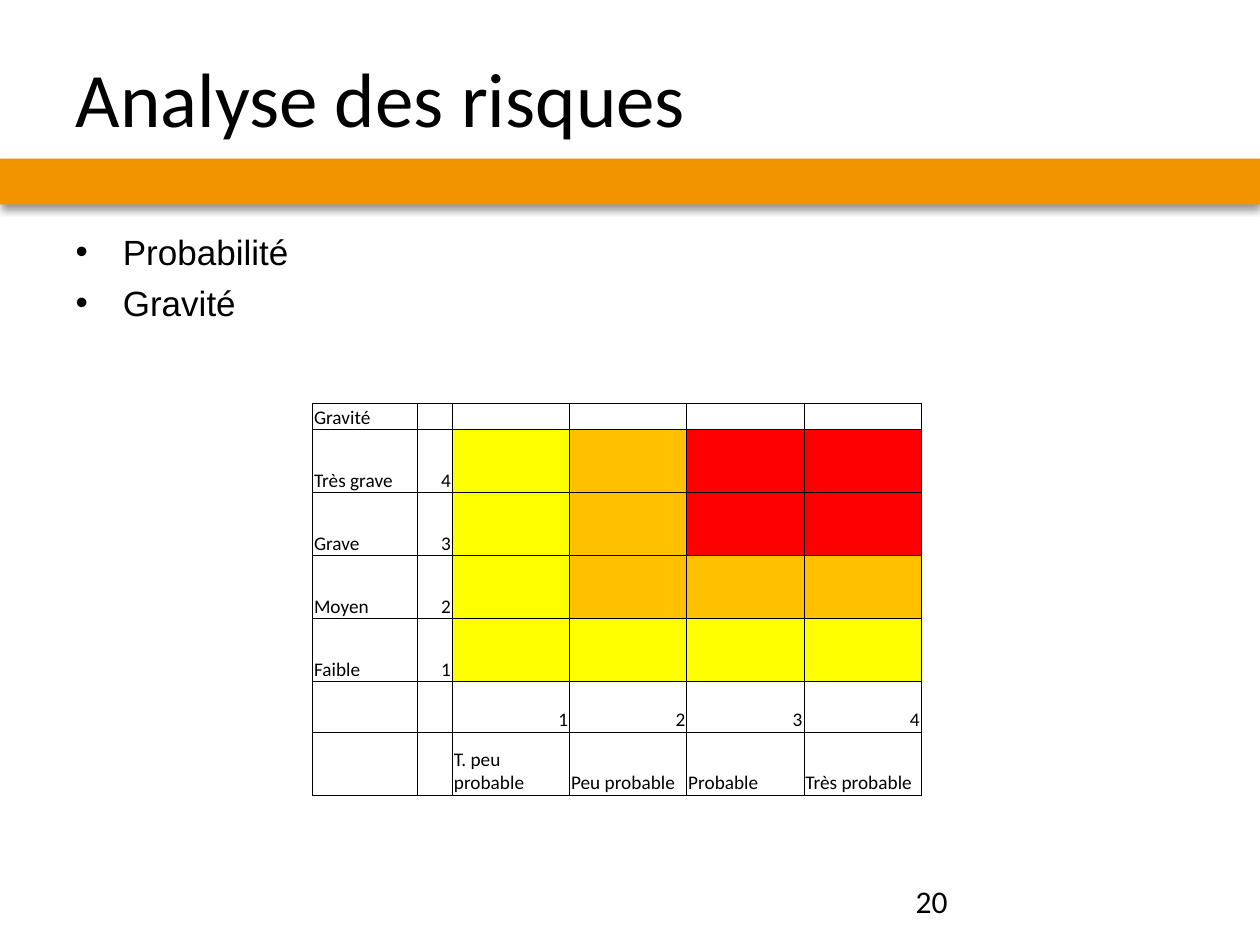
import pptx
import pptx.dml.color
import pptx.enum.shapes
import pptx.enum.text
import pptx.oxml
import pptx.oxml.ns
import pptx.util
from dataclasses import dataclass

Cm = pptx.util.Cm
Pt = pptx.util.Pt
Align = pptx.enum.text.PP_ALIGN
Anchor = pptx.enum.text.MSO_ANCHOR
DRAWING = pptx.oxml.ns.nsdecls("a")


@dataclass(frozen=True)
class Theme:
    ink: str = "000000"
    band: str = "F29400"
    low: str = "FFFF00"
    medium: str = "FFC000"
    high: str = "FF0000"
    heading_font: str = "Calibri"
    body_font: str = "Arial"
    title_size: int = 44
    body_size: int = 20
    number_size: int = 18
    cell_size: int = 11
    border_width: float = 0.5


THEME = Theme()

SEVERITIES = [
    ("Très grave", "4", "LMHH"),
    ("Grave", "3", "LMHH"),
    ("Moyen", "2", "LMMM"),
    ("Faible", "1", "LLLL"),
]
PROBABILITIES = ["T. peu probable", "Peu probable", "Probable", "Très probable"]
RISK_COLOURS = {"L": THEME.low, "M": THEME.medium, "H": THEME.high}


def set_formats(target, formats):
    for name, value in formats.items():
        setattr(target, name, value)


def place(shape, box):
    """Box is left, top, width and height in centimetres."""
    lengths = map(Cm, box)
    set_formats(shape, dict(zip(("left", "top", "width", "height"), lengths)))


def write(para, text, font, size):
    span = para.add_run()
    span.text = text
    set_formats(span.font, {"name": font, "size": Pt(size), "bold": False})
    span.font.color.rgb = pptx.dml.color.RGBColor.from_string(THEME.ink)


def fill(target, colour):
    target.fill.solid()
    target.fill.fore_color.rgb = pptx.dml.color.RGBColor.from_string(colour)


def add_band(page, box):
    band = page.shapes.add_shape(
        pptx.enum.shapes.MSO_SHAPE.RECTANGLE, *map(Cm, box))
    fill(band, THEME.band)
    band.line.fill.background()
    band.element.spPr.append(pptx.oxml.parse_xml(
        f'<a:effectLst {DRAWING}><a:outerShdw blurRad="{Pt(4)}" dist="{Pt(3)}" '
        f'dir="5400000" rotWithShape="0"><a:srgbClr val="{THEME.ink}">'
        '<a:alpha val="40000"/></a:srgbClr></a:outerShdw></a:effectLst>'))
    page.shapes.element.insert(2, band.element)  # behind the placeholders


def fill_title(page, box, text):
    title = page.shapes.title
    place(title, box)
    set_formats(title.text_frame, {
        "vertical_anchor": Anchor.TOP,
        "margin_top": Cm(0.25),
        "auto_size": pptx.enum.text.MSO_AUTO_SIZE.NONE,
    })
    para = title.text_frame.paragraphs[0]
    para.alignment = Align.LEFT
    write(para, text, THEME.heading_font, THEME.title_size)


def fill_list(page, box, items):
    body = page.placeholders[1]
    place(body, box)
    frame = body.text_frame
    set_formats(frame, {
        "margin_top": Cm(0.2),
        "auto_size": pptx.enum.text.MSO_AUTO_SIZE.NONE,
    })
    for index, item in enumerate(items):
        para = frame.add_paragraph() if index else frame.paragraphs[0]
        para.space_before = Pt(5 if index else 0)
        write(para, item, THEME.body_font, THEME.body_size)


def add_borders(cell):
    properties = cell._tc.get_or_add_tcPr()
    for side in ("lnL", "lnR", "lnT", "lnB"):
        properties.append(pptx.oxml.parse_xml(
            f'<a:{side} {DRAWING} w="{Pt(THEME.border_width)}"><a:solidFill>'
            f'<a:srgbClr val="{THEME.ink}"/></a:solidFill></a:{side}>'))


def format_cell(cell, text, colour):
    set_formats(cell, {
        "vertical_anchor": Anchor.BOTTOM,
        "margin_left": Cm(0.03),
        "margin_right": Cm(0.03),
        "margin_top": Cm(0.03),
        "margin_bottom": 0,
    })
    add_borders(cell)
    if colour:
        fill(cell, colour)
    else:
        cell.fill.background()
    para = cell.text_frame.paragraphs[0]
    if text:
        para.alignment = Align.RIGHT if text.isdigit() else Align.LEFT
        write(para, text, THEME.heading_font, THEME.cell_size)
    else:  # keeps an empty cell from stretching its row
        para._p.append(pptx.oxml.parse_xml(
            f'<a:endParaRPr {DRAWING} sz="{THEME.cell_size * 100}"/>'))


def risk_rows():
    """Each cell is a pair of text and fill colour."""
    yield [("Gravité", None)] + [("", None)] * 5
    for name, level, risks in SEVERITIES:
        yield [(name, None), (level, None)] + [("", RISK_COLOURS[r]) for r in risks]
    blanks = [("", None)] * 2
    yield blanks + [(str(n + 1), None) for n in range(len(PROBABILITIES))]
    yield blanks + [(name, None) for name in PROBABILITIES]


def add_risk_matrix(page, box):
    left, top, width, height = box
    rows = list(risk_rows())
    label, level = 2.11, 0.71
    widths = [label, level] + [(width - label - level) / 4] * 4
    heading, levels = 0.53, 1.02
    tall = (height - heading - levels) / 5
    heights = [heading] + [tall] * 4 + [levels, tall]
    table = page.shapes.add_table(
        len(rows), len(widths), *map(Cm, box)).table
    set_formats(table, {"first_row": False, "horz_banding": False})
    for column, size in zip(table.columns, widths):
        column.width = Cm(size)
    for row, size, contents in zip(table.rows, heights, rows):
        row.height = Cm(size)
        for cell, (text, colour) in zip(row.cells, contents):
            format_cell(cell, text, colour)


def add_page_number(page, box, number):
    frame = page.shapes.add_textbox(*map(Cm, box)).text_frame
    frame.word_wrap = True
    write(frame.paragraphs[0], number, THEME.heading_font, THEME.number_size)


def main():
    deck = pptx.Presentation()
    set_formats(deck, {"slide_width": Cm(25.4), "slide_height": Cm(19.05)})
    page = deck.slides.add_slide(deck.slide_layouts[1])
    add_band(page, (0, 3.2, 25.4, 0.92))
    add_page_number(page, (18.21, 17.65, 5.92, 1.02), "20")
    fill_list(page, (1.27, 4.45, 23.24, 3.07), ["Probabilité", "Gravité"])
    fill_title(page, (1.27, 0.76, 22.86, 3.18), "Analyse des risques")
    add_risk_matrix(page, (6.3, 8.13, 12.27, 7.9))
    deck.save("out.pptx")


if __name__ == "__main__":
    main()
